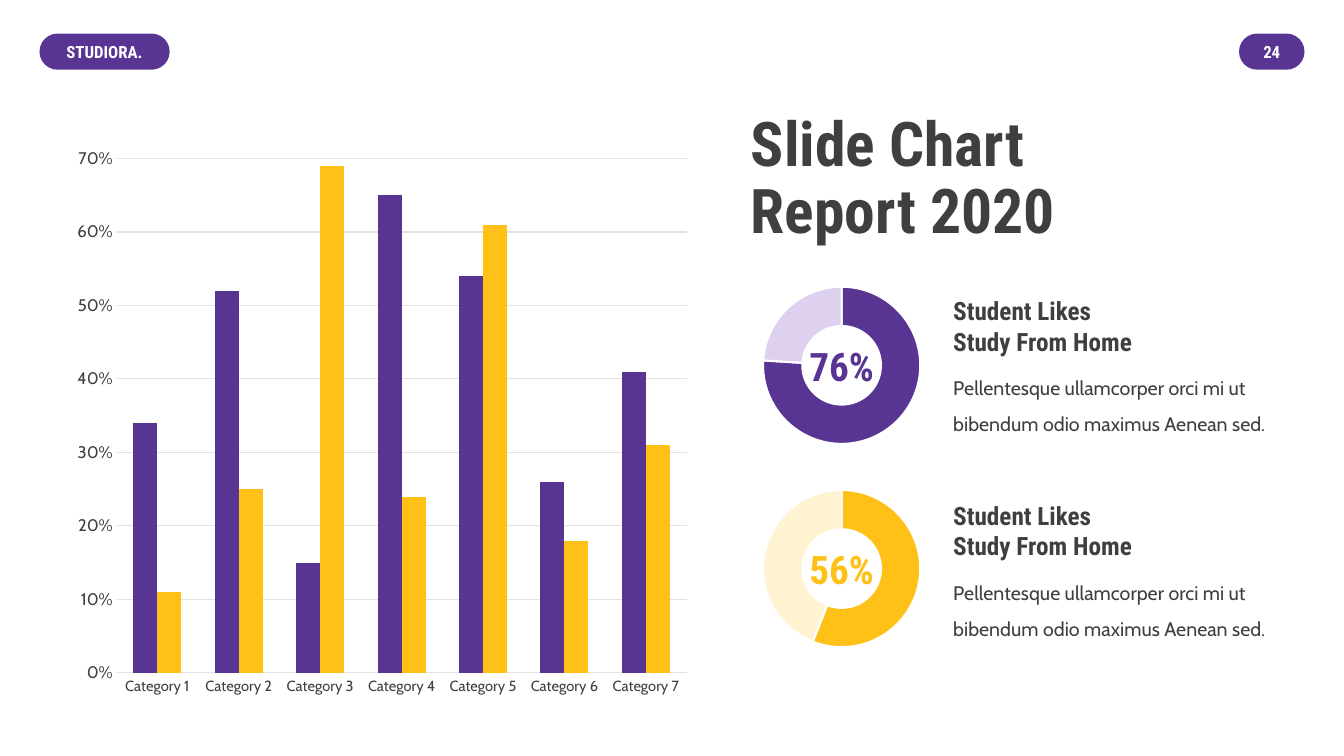
from lxml.etree import SubElement
from pptx import Presentation
from pptx.chart.data import CategoryChartData
from pptx.dml.color import RGBColor
from pptx.enum.chart import XL_CHART_TYPE as ChartType, XL_TICK_MARK as Tick
from pptx.enum.shapes import MSO_SHAPE as Preset
from pptx.enum.text import MSO_ANCHOR as Anchor, PP_ALIGN as Align
from pptx.oxml.ns import qn
from pptx.util import Inches, Pt

COLUMNS, ROWS = 160, 90
WIDTH, HEIGHT = Inches(13.33), Inches(7.5)
HEADING_FONT, BODY_FONT = "Roboto Condensed", "Cabin"
COLORS = {
    "purple": "593593",
    "lilac": "DDD1EF",
    "yellow": "FFC118",
    "cream": "FFF3D1",
    "text": "3F3F3F",
    "grid": "E2E2E2",
    "white": "FFFFFF",
}
CATEGORIES = [f"Category {number}" for number in range(1, 8)]
BAR_SERIES = [
    ("Series 1", "purple", [0.34, 0.52, 0.15, 0.65, 0.54, 0.26, 0.41]),
    ("Series 2", "yellow", [0.11, 0.25, 0.69, 0.24, 0.61, 0.18, 0.31]),
]
# share, colour, rest colour, row of the ring, row of the text
SURVEYS = [
    (76, "purple", "lilac", 32.3, 34.6),
    (56, "yellow", "cream", 56.5, 59),
]
SURVEY_HEADING = "Student Likes\nStudy From Home"
SURVEY_BODY = "Pellentesque ullamcorper orci mi ut bibendum odio maximus Aenean sed."


def color(name):
    return RGBColor.from_string(COLORS[name])


def place(column, row, columns, rows):
    """Turn grid units into left, top, width and height."""
    return (int(WIDTH * column / COLUMNS), int(HEIGHT * row / ROWS),
            int(WIDTH * columns / COLUMNS), int(HEIGHT * rows / ROWS))


def style_font(font, size, name=BODY_FONT, ink="text", bold=False):
    font.size = Pt(size)
    font.name = name
    font.bold = bold
    font.color.rgb = color(ink)


def fill_text(frame, text, align=Align.LEFT, spacing=None, **style):
    frame.text = text
    for para in frame.paragraphs:
        para.alignment = align
        if spacing:
            para.line_spacing = spacing
        for span in para.runs:
            style_font(span.font, **style)


def add_text(page, grid, text, anchor=Anchor.TOP, wrap=True, **style):
    box = page.shapes.add_textbox(*place(*grid))
    box.text_frame.word_wrap = wrap
    box.text_frame.vertical_anchor = anchor
    fill_text(box.text_frame, text, **style)


def add_badge(page, grid, text):
    badge = page.shapes.add_shape(Preset.ROUNDED_RECTANGLE, *place(*grid))
    badge.adjustments[0] = 0.5
    badge.shadow.inherit = False
    badge.fill.solid()
    badge.fill.fore_color.rgb = color("purple")
    badge.line.fill.background()
    frame = badge.text_frame
    frame.margin_top = frame.margin_bottom = 0
    frame.vertical_anchor = Anchor.MIDDLE
    fill_text(frame, text, align=Align.CENTER, size=12, name=HEADING_FONT,
              ink="white", bold=True)


def set_plot_area(chart, x, y, w, h):
    """Place the inner plot area by shares of the chart's size."""
    plot_area = chart.plots[0]._element.getparent()
    for old in plot_area.findall(qn("c:layout")):
        plot_area.remove(old)
    layout = SubElement(plot_area, qn("c:layout"))
    plot_area.insert(0, layout)
    manual = SubElement(layout, qn("c:manualLayout"))
    settings = [("layoutTarget", "inner"), ("xMode", "edge"), ("yMode", "edge"),
                ("x", x), ("y", y), ("w", w), ("h", h)]
    for tag, value in settings:
        SubElement(manual, qn(f"c:{tag}")).set("val", str(value))


def add_plain_chart(page, kind, grid, categories, series, area):
    data = CategoryChartData()
    data.categories = categories
    for name, values in series:
        data.add_series(name, values)
    chart = page.shapes.add_chart(kind, *place(*grid), data).chart
    chart.has_title = False
    chart.has_legend = False
    style_font(chart.font, 10)
    set_plot_area(chart, *area)
    return chart


def style_line(line, ink, width):
    line.color.rgb = color(ink)
    line.width = Pt(width)


def add_bars(page, grid):
    chart = add_plain_chart(page, ChartType.COLUMN_CLUSTERED, grid, CATEGORIES,
                            [(name, values) for name, _, values in BAR_SERIES],
                            (0.06, 0.05, 0.94, 0.91))
    plot = chart.plots[0]
    plot.vary_by_categories = False
    plot.gap_width, plot.overlap = 140, 0
    for series, (_, ink, _) in zip(plot.series, BAR_SERIES):
        series.format.fill.solid()
        series.format.fill.fore_color.rgb = color(ink)

    for axis, size in ((chart.category_axis, 10.5), (chart.value_axis, 12)):
        axis.major_tick_mark = axis.minor_tick_mark = Tick.NONE
        style_font(axis.tick_labels.font, size)
    style_line(chart.category_axis.format.line, "grid", 0.75)

    scale = chart.value_axis
    scale.minimum_scale, scale.maximum_scale, scale.major_unit = 0, 0.75, 0.1
    scale.tick_labels.number_format = "0%"
    scale.tick_labels.number_format_is_linked = False
    scale.format.line.fill.background()
    style_line(scale.major_gridlines.format.line, "grid", 0.75)


def add_ring(page, grid, share, inks):
    chart = add_plain_chart(page, ChartType.DOUGHNUT, grid, ["1", "2"],
                            [("Series 1", [share, 100 - share])],
                            (0.11, 0.08, 0.78, 0.84))
    plot = chart.plots[0]
    plot._element.find(qn("c:holeSize")).set("val", "75")
    for index, ink in enumerate(inks):
        part = plot.series[0].points[index].format
        part.fill.solid()
        part.fill.fore_color.rgb = color(ink)
        style_line(part.line, "white", 1.5)


def add_survey(page, share, ink, rest_ink, ring_row, text_row):
    add_ring(page, (88.2, ring_row, 24, 22.4), share, (ink, rest_ink))
    add_text(page, (92.6, ring_row + 7.8, 15.2, 6.8), f"{share}%",
             align=Align.CENTER, size=28, name=HEADING_FONT, ink=ink, bold=True)
    add_text(page, (112.3, text_row, 24, 8.5), SURVEY_HEADING, wrap=False,
             size=18, name=HEADING_FONT, bold=True)
    add_text(page, (112.3, text_row + 8.2, 41.8, 9.2), SURVEY_BODY,
             spacing=1.5, size=14)


def main():
    deck = Presentation()
    deck.slide_width, deck.slide_height = WIDTH, HEIGHT
    page = deck.slides.add_slide(deck.slide_layouts[6])
    add_badge(page, (4.7, 4, 15.5, 4.3), "STUDIORA.")
    add_badge(page, (147.5, 4, 7.8, 4.3), "24")
    add_text(page, (88.2, 8.8, 90, 25.3), "Slide Chart\vReport 2020",
             anchor=Anchor.MIDDLE, spacing=0.9, size=44, name=HEADING_FONT,
             bold=True)
    add_bars(page, (9.2, 10.9, 72.6, 72.1))
    for survey in SURVEYS:
        add_survey(page, *survey)
    deck.save("out.pptx")


if __name__ == "__main__":
    main()
